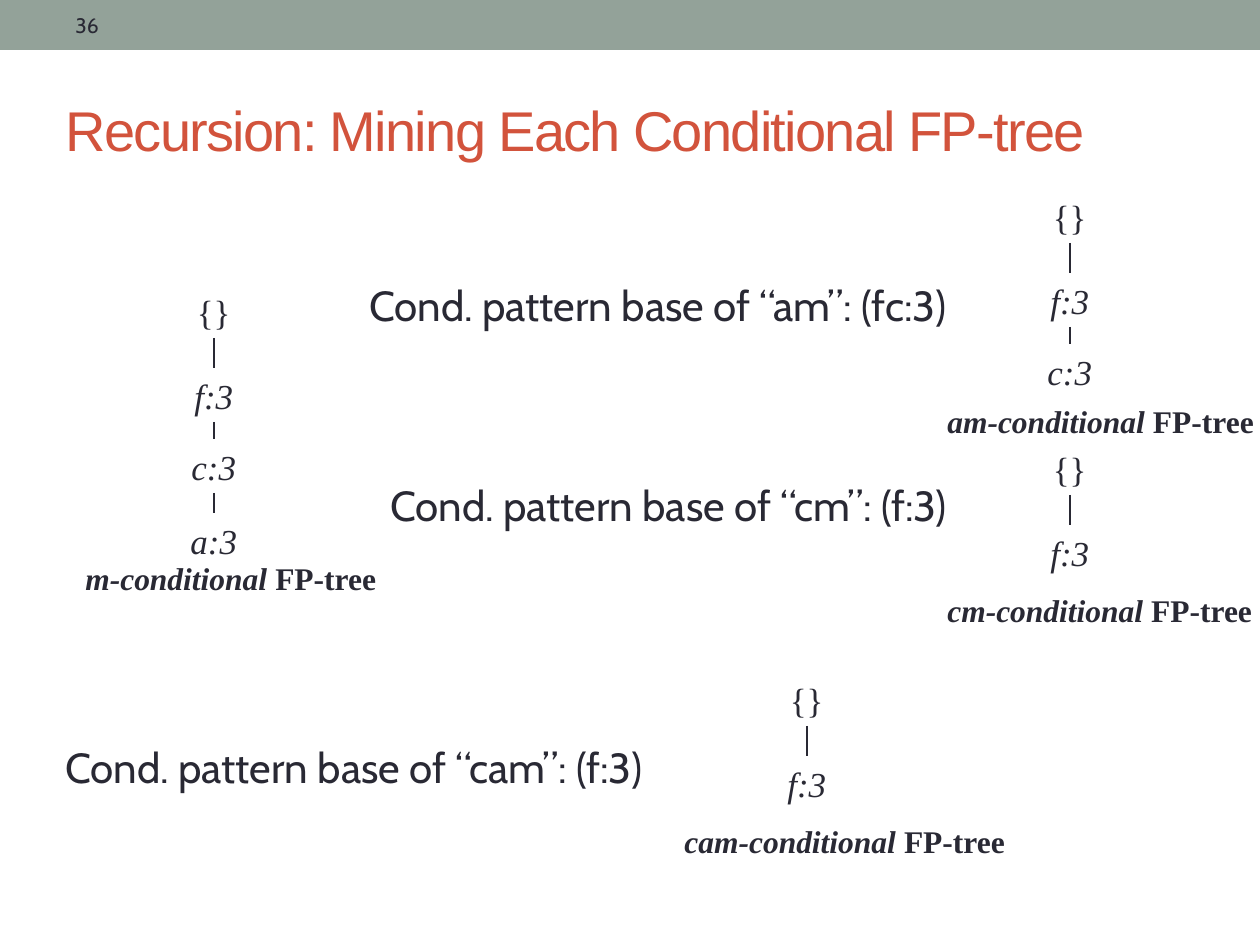
"""Build the slide on recursive mining of conditional FP-trees."""
import dataclasses

import pptx
import pptx.dml.color
import pptx.enum.shapes
import pptx.enum.text
import pptx.oxml
import pptx.util
from lxml import etree

EMU_PER_PX = 914400 / 126
NODE_HEIGHT = 54
NODE_OFFSETS = (0, 84, 155, 229)
NODE_WIDTHS = {"{}": 59, "f:3": 64, "c:3": 70, "a:3": 72}


def px(length):
    return pptx.util.Emu(round(length * EMU_PER_PX))


@dataclasses.dataclass(frozen=True)
class Theme:
    ink: str = "292934"
    accent: str = "D2533C"
    band: str = "93A299"
    heading_font: str = "Arial"
    body_font: str = "Cabin"
    tree_font: str = "Times New Roman"
    title_size: int = 32
    base_size: int = 24
    node_size: int = 20
    label_size: int = 18
    number_size: int = 12


class SlideBuilder:
    def __init__(self, slide, theme):
        self.slide = slide
        self.theme = theme

    def run(self, paragraph, words, font, size, color=None, bold=False, italic=False):
        run = paragraph.add_run()
        run.text = words
        run.font.name = font
        run.font.size = pptx.util.Pt(size)
        run.font.bold = bold
        run.font.italic = italic
        run.font.color.rgb = pptx.dml.color.RGBColor.from_string(color or self.theme.ink)
        return run

    def band(self, width, height):
        band = self.slide.shapes.add_shape(
            pptx.enum.shapes.MSO_SHAPE.RECTANGLE, 0, 0, px(width), px(height))
        band.shadow.inherit = False
        band.fill.solid()
        band.fill.fore_color.rgb = pptx.dml.color.RGBColor.from_string(self.theme.band)
        band.line.fill.background()

    def title(self, words, left, top, width, height):
        title = self.slide.shapes.title
        title.left, title.top, title.width, title.height = map(px, (left, top, width, height))
        frame = title.text_frame
        frame.auto_size = pptx.enum.text.MSO_AUTO_SIZE.NONE
        frame.vertical_anchor = pptx.enum.text.MSO_ANCHOR.MIDDLE
        heading = frame.paragraphs[0]
        heading.alignment = pptx.enum.text.PP_ALIGN.LEFT
        run = self.run(heading, words, self.theme.heading_font,
                       self.theme.title_size, self.theme.accent)
        run.font._element.set("spc", "-100")

    def text_box(self, left, top, width, height, wrap=False):
        frame = self.slide.shapes.add_textbox(*map(px, (left, top, width, height))).text_frame
        frame.word_wrap = wrap
        return frame

    def page_number(self, number, left, top, width, height):
        frame = self.text_box(left, top, width, height, wrap=True)
        frame.vertical_anchor = pptx.enum.text.MSO_ANCHOR.MIDDLE
        self.run(frame.paragraphs[0], number, self.theme.body_font, self.theme.number_size)

    def pattern_base(self, item, base, left, top, width):
        frame = self.text_box(left, top, width, 63, wrap=True)
        self.run(frame.paragraphs[0], f"Cond. pattern base of “{item}”: ({base})",
                 self.theme.body_font, self.theme.base_size)

    def node(self, words, center, top):
        width = NODE_WIDTHS[words]
        frame = self.text_box(center - width / 2, top, width, NODE_HEIGHT)
        self.run(frame.paragraphs[0], words, self.theme.tree_font,
                 self.theme.node_size, italic=words != "{}")

    def branch(self, center, top, bottom):
        branch = self.slide.shapes.add_connector(
            pptx.enum.shapes.MSO_CONNECTOR.STRAIGHT, *map(px, (center, top, center, bottom)))
        branch.line.color.rgb = pptx.dml.color.RGBColor.from_string(self.theme.ink)
        branch.line.width = pptx.util.Pt(1)
        etree.SubElement(branch._element.spPr, pptx.oxml.ns.qn("a:effectLst"))

    def tree_label(self, item, left, top, width):
        caption = self.text_box(left, top, width, 50).paragraphs[0]
        for words, italic in ((f"{item}-conditional ", True), ("FP-tree", False)):
            self.run(caption, words, self.theme.tree_font, self.theme.label_size,
                     bold=True, italic=italic)

    def tree(self, item, nodes, center, top, label_left, label_top, label_width):
        levels = [top + offset for offset in NODE_OFFSETS[:len(nodes)]]
        for words, level in zip(nodes, levels):
            self.node(words, center, level)
        for upper, lower in zip(levels, levels[1:]):
            self.branch(center, upper + NODE_HEIGHT, lower)
        self.tree_label(item, label_left, label_top, label_width)


def main():
    deck = pptx.Presentation()
    deck.slide_width, deck.slide_height = px(1260), px(945)
    page = SlideBuilder(deck.slides.add_slide(deck.slide_layouts[5]), Theme())

    page.band(1260, 50)
    page.page_number("36", 63, 3, 399, 45)
    page.title("Recursion: Mining Each Conditional FP-tree", 53, 53, 1177, 152)

    for base in (("am", "fc:3", 357, 273, 663),
                 ("cm", "f:3", 378, 473, 641),
                 ("cam", "f:3", 53, 735, 663)):
        page.pattern_base(*base)

    for tree in (("m", ("{}", "f:3", "c:3", "a:3"), 214, 284, 73, 553, 316),
                 ("am", ("{}", "f:3", "c:3"), 1070, 189, 935, 396, 333),
                 ("cm", ("{}", "f:3"), 1070, 441, 935, 585, 330),
                 ("cam", ("{}", "f:3"), 807, 672, 672, 816, 347)):
        page.tree(*tree)

    deck.save("out.pptx")


if __name__ == "__main__":
    main()
